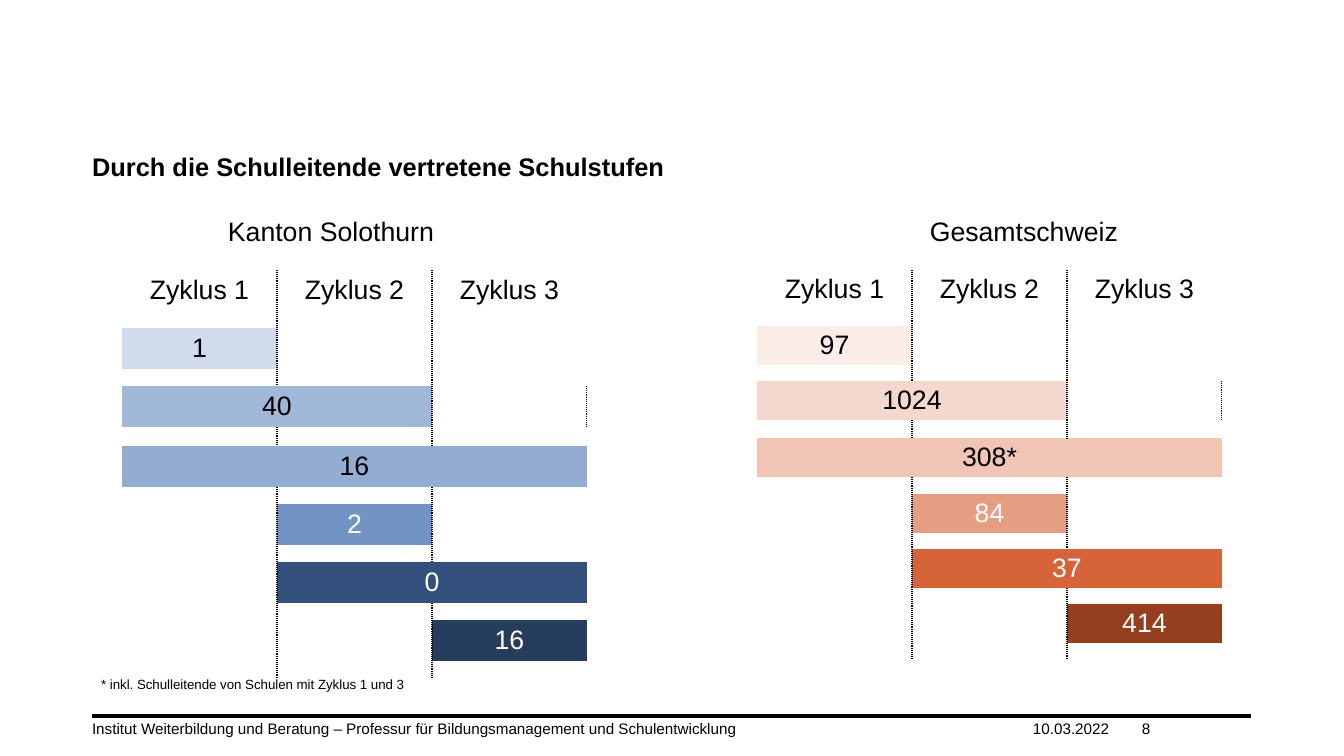
from lxml import etree
from pptx import Presentation
from pptx.dml.color import RGBColor
from pptx.enum.shapes import MSO_CONNECTOR
from pptx.enum.text import MSO_ANCHOR, PP_ALIGN
from pptx.oxml import parse_xml
from pptx.oxml.ns import nsdecls, qn
from pptx.util import Pt

PX = 10000
FONT = "Arial"
NO_STYLE = "{2D5ABB26-0587-4C30-8999-92F81FD0307C}"
COLORS = {
    "black": "000000",
    "white": "FFFFFF",
    "solothurn": ["D0DBEB", "A1B7D8", "92ACD2", "7293C4", "34517D", "273D5E"],
    "schweiz": ["FAECE6", "F5D8CD", "F0C5B5", "E69E83", "D76338", "963F1E"],
}
CYCLES = ["Zyklus 1", "Zyklus 2", "Zyklus 3"]
CYCLE_WIDTH = 155
CYCLE_SPANS = [(0, 1), (0, 2), (0, 3), (1, 1), (1, 2), (2, 1)]
DARK_TEXT_BARS = 3


def rgb(color):
    return RGBColor.from_string(color)


def place(shape, left, top, width, height):
    shape.left, shape.top = left * PX, top * PX
    shape.width, shape.height = width * PX, height * PX


def write(frame, text, size, color=COLORS["black"], align=PP_ALIGN.LEFT, bold=False):
    frame.text = text
    paragraph = frame.paragraphs[0]
    paragraph.alignment = align
    for run in paragraph.runs:
        run.font.name = FONT
        run.font.size = Pt(size)
        run.font.bold = bold
        run.font.color.rgb = rgb(color)


def clear_insets(frame):
    frame.margin_left = frame.margin_right = 0
    frame.margin_top = frame.margin_bottom = 0


def add_heading(slide, text):
    heading = slide.shapes.title
    place(heading, 92, 151, 1159, 37)
    write(heading.text_frame, text, 20, bold=True)
    clear_insets(heading.text_frame)
    heading.text_frame.vertical_anchor = MSO_ANCHOR.TOP


def add_label(slide, box, text, size, align=PP_ALIGN.LEFT):
    label = slide.shapes.add_textbox(*(length * PX for length in box))
    label.text_frame.word_wrap = True
    write(label.text_frame, text, size, align=align)
    return label


def add_footer_part(slide, left, width, text):
    frame = add_label(slide, (left, 720, width, 18), text, 12).text_frame
    clear_insets(frame)
    frame.vertical_anchor = MSO_ANCHOR.BOTTOM


def add_rule(slide):
    rule = slide.shapes.add_connector(
        MSO_CONNECTOR.STRAIGHT, 92 * PX, 716 * PX, 1251 * PX, 716 * PX)
    rule.line.width = Pt(3)
    rule.line.color.rgb = rgb(COLORS["black"])
    etree.SubElement(rule._element.spPr, qn("a:effectLst"))


def add_dotted_border(cell, side):
    cell._tc.get_or_add_tcPr().append(parse_xml(
        f'<a:{side} {nsdecls("a")} w="{Pt(1)}"><a:solidFill>'
        f'<a:srgbClr val="{COLORS["black"]}"/></a:solidFill>'
        f'<a:prstDash val="sysDot"/></a:{side}>'))


def format_cell(cell, first, last):
    cell.margin_top = cell.margin_bottom = 0
    cell.vertical_anchor = MSO_ANCHOR.MIDDLE
    if first > 0:
        add_dotted_border(cell, "lnL")
    if last < len(CYCLES) - 1:
        add_dotted_border(cell, "lnR")
    cell.fill.background()
    cell.text_frame.paragraphs[0]._p.get_or_add_endParaRPr().set("sz", "600")


def add_cycle_table(slide, left, bar_height, gaps, counts, fills):
    heights = [height for gap in gaps for height in (bar_height, gap)]
    table = slide.shapes.add_table(
        len(heights), len(CYCLES), left * PX, 270 * PX,
        CYCLE_WIDTH * len(CYCLES) * PX, sum(heights) * PX).table
    table.first_row = table.horz_banding = False
    table._tbl.tblPr.find(qn("a:tableStyleId")).text = NO_STYLE
    for column in table.columns:
        column.width = CYCLE_WIDTH * PX
    for row, height in zip(table.rows, heights):
        row.height = height * PX

    for bar, (start, span) in enumerate(CYCLE_SPANS, 1):
        if span > 1:
            table.cell(2 * bar, start).merge(table.cell(2 * bar, start + span - 1))
    for row in range(len(heights)):
        for column in range(len(CYCLES)):
            cell = table.cell(row, column)
            span = cell.span_width if cell.is_merge_origin else 1
            if cell.is_spanned:
                cell.margin_top = cell.margin_bottom = 0
                cell.fill.background()
            else:
                format_cell(cell, column, column + span - 1)

    for column, cycle in enumerate(CYCLES):
        write(table.cell(0, column).text_frame, cycle, 21, align=PP_ALIGN.CENTER)
    for bar, (count, fill) in enumerate(zip(counts, fills)):
        cell = table.cell(2 * bar + 2, CYCLE_SPANS[bar][0])
        color = COLORS["black" if bar < DARK_TEXT_BARS else "white"]
        write(cell.text_frame, count, 21, color, PP_ALIGN.CENTER)
        cell.fill.solid()
        cell.fill.fore_color.rgb = rgb(fill)


def main():
    deck = Presentation()
    deck.slide_width, deck.slide_height = 1344 * PX, 756 * PX
    slide = deck.slides.add_slide(deck.slide_layouts[5])

    add_heading(slide, "Durch die Schulleitende vertretene Schulstufen")
    add_rule(slide)
    add_label(slide, (217, 210, 226, 41), "Kanton Solothurn", 21, PP_ALIGN.RIGHT)
    add_label(slide, (917, 210, 210, 41), "Gesamtschweiz", 21, PP_ALIGN.RIGHT)
    add_cycle_table(slide, 757, 39, [17, 16, 18, 17, 16, 16, 16],
                    ["97", "1024", "308*", "84", "37", "414"], COLORS["schweiz"])
    add_label(slide, (92, 672, 456, 26),
              "* inkl. Schulleitende von Schulen mit Zyklus 1 und 3", 10.5)
    add_cycle_table(slide, 122, 41, [17, 17, 19, 17, 17, 17, 17],
                    ["1", "40", "16", "2", "0", "16"], COLORS["solothurn"])
    add_footer_part(slide, 92, 941, "Institut Weiterbildung und Beratung – "
                    "Professur für Bildungsmanagement und Schulentwicklung")
    add_footer_part(slide, 1033, 109, "10.03.2022")
    add_footer_part(slide, 1142, 109, "8")
    deck.save("out.pptx")


if __name__ == "__main__":
    main()
